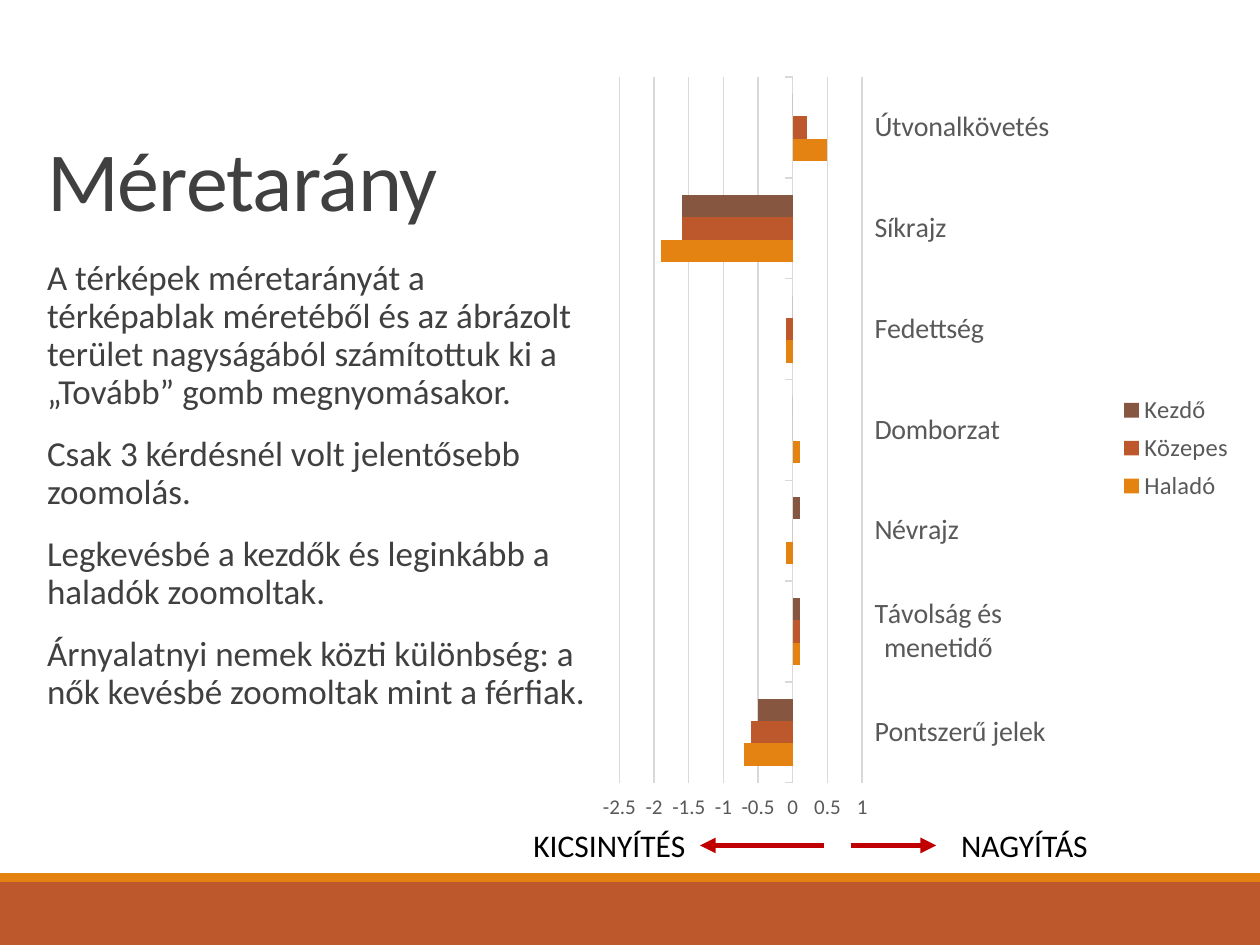
from dataclasses import dataclass

from lxml import etree
from pptx import Presentation
from pptx.chart.data import CategoryChartData
from pptx.dml.color import RGBColor
from pptx.enum.chart import XL_CHART_TYPE, XL_LEGEND_POSITION, XL_TICK_LABEL_POSITION, XL_TICK_MARK
from pptx.enum.shapes import MSO_CONNECTOR, MSO_SHAPE
from pptx.enum.text import MSO_ANCHOR
from pptx.oxml.ns import qn
from pptx.util import Inches, Pt

BAR = XL_CHART_TYPE.BAR_CLUSTERED
LEGEND_RIGHT = XL_LEGEND_POSITION.RIGHT
LABELS_HIGH = XL_TICK_LABEL_POSITION.HIGH
TICK_OUT, TICK_NONE = XL_TICK_MARK.OUTSIDE, XL_TICK_MARK.NONE
STRAIGHT = MSO_CONNECTOR.STRAIGHT
RECT = MSO_SHAPE.RECTANGLE
TOP, BOTTOM = MSO_ANCHOR.TOP, MSO_ANCHOR.BOTTOM
RIGHT_SIDE = 3

# The slide is a grid of square cells
COLS, ROWS, CELL = 100, 75, 0.1


@dataclass(frozen=True)
class Theme:
    font: str = "Calibri"
    text: str = "404040"
    label: str = "000000"
    axis: str = "595959"
    grid: str = "D9D9D9"
    arrow: str = "C00000"
    orange: str = "E48312"
    rust: str = "BD582C"
    brown: str = "865640"
    title_size: int = 48
    body_size: int = 20
    label_size: int = 18
    category_size: int = 16
    legend_size: int = 14
    value_size: int = 12
    chart_size: int = 10


THEME = Theme()

BODY = [
    "A térképek méretarányát a térképablak méretéből és az ábrázolt terület "
    "nagyságából számítottuk ki a „Tovább” gomb megnyomásakor.",
    "Csak 3 kérdésnél volt jelentősebb zoomolás.",
    "Legkevésbé a kezdők és leginkább a haladók zoomoltak.",
    "Árnyalatnyi nemek közti különbség: a nők kevésbé zoomoltak mint a férfiak.",
]
CATEGORIES = ["Pontszerű jelek", "Távolság és menetidő", "Névrajz", "Domborzat",
              "Fedettség", "Síkrajz", "Útvonalkövetés"]
SERIES = [
    ("Haladó", THEME.orange, (-0.7, 0.1, -0.1, 0.1, -0.1, -1.9, 0.5)),
    ("Közepes", THEME.rust, (-0.6, 0.1, 0, 0, -0.1, -1.6, 0.2)),
    ("Kezdő", THEME.brown, (-0.5, 0.1, 0.1, 0, 0, -1.6, 0)),
]


def cells(*counts):
    return [Inches(n * CELL) for n in counts]


def rgb(color):
    return RGBColor.from_string(color)


def style_font(font, size, color):
    font.name = THEME.font
    font.size = Pt(size)
    font.color.rgb = rgb(color)


def add_band(s, top, height, color):
    sp = s.shapes.add_shape(RECT, *cells(0, top, COLS, height))
    sp.shadow.inherit = False
    sp.fill.solid()
    sp.fill.fore_color.rgb = rgb(color)
    sp.line.fill.background()


def add_text(s, box, paragraphs, size, color, wrap=True, anchor=TOP,
             line_spacing=1.0, before=0, after=0, tracking=0):
    sp = s.shapes.add_textbox(*cells(*box))
    tf = sp.text_frame
    tf.word_wrap = wrap
    tf.vertical_anchor = anchor
    for i, text in enumerate(paragraphs):
        p = tf.paragraphs[0] if i == 0 else tf.add_paragraph()
        p.line_spacing = line_spacing
        p.space_before, p.space_after = Pt(before), Pt(after)
        r = p.add_run()
        r.text = text
        style_font(r.font, size, color)
        if tracking:
            r.font._element.set("spc", str(int(tracking * 100)))
    return sp


def add_arrow(s, start, end, row):
    cxn = s.shapes.add_connector(STRAIGHT, *cells(start, row, end, row))
    cxn.line.color.rgb = rgb(THEME.arrow)
    cxn.line.width = Pt(3)
    etree.SubElement(cxn.line._get_or_add_ln(), qn("a:tailEnd"), type="triangle")
    etree.SubElement(cxn._element.spPr, qn("a:effectLst"))
    return cxn


def place_in_chart(parent, index, inner, **percents):
    """Set a manual layout, in percent of the chart's size."""
    for old in parent.findall(qn("c:layout")):
        parent.remove(old)
    layout = etree.Element(qn("c:layout"))
    manual = etree.SubElement(layout, qn("c:manualLayout"))
    if inner:
        etree.SubElement(manual, qn("c:layoutTarget"), val="inner")
    for mode in ("xMode", "yMode"):
        etree.SubElement(manual, qn("c:" + mode), val="edge")
    for name, percent in percents.items():
        etree.SubElement(manual, qn("c:" + name), val=f"{percent / 100:.4f}")
    parent.insert(index, layout)


def style_axes(chart):
    cat, val = chart.category_axis, chart.value_axis
    cat.tick_label_position = LABELS_HIGH
    val.minimum_scale, val.maximum_scale, val.major_unit = -2.5, 1, 0.5
    val.has_major_gridlines = True
    val.format.line.fill.background()
    for line in (cat.format.line, val.major_gridlines.format.line):
        line.color.rgb = rgb(THEME.grid)
        line.width = Pt(0.75)
    for axis, size in ((cat, THEME.category_size), (val, THEME.value_size)):
        axis.major_tick_mark, axis.minor_tick_mark = TICK_OUT, TICK_NONE
        style_font(axis.tick_labels.font, size, THEME.axis)


def add_bar_chart(s, box):
    data = CategoryChartData(number_format="General")
    data.categories = CATEGORIES
    for name, _, values in SERIES:
        data.add_series(name, values)
    chart = s.shapes.add_chart(BAR, *cells(*box), data).chart
    chart.has_title = False
    style_font(chart.font, THEME.chart_size, THEME.label)
    style_axes(chart)

    # Bars
    plot = chart.plots[0]
    plot.gap_width, plot.overlap = 150, 0
    plot.vary_by_categories = False
    for series, (_, color, _) in zip(plot.series, SERIES):
        series.invert_if_negative = False
        series.format.fill.solid()
        series.format.fill.fore_color.rgb = rgb(color)

    # Legend and plot area
    chart.has_legend = True
    legend = chart.legend
    legend.position = LEGEND_RIGHT
    legend.include_in_layout = False
    style_font(legend.font, THEME.legend_size, THEME.axis)
    place_in_chart(legend._element, 1, False, x=77.5, y=42.1, w=20, h=15.7)
    plot_area = chart._chartSpace.chart.plotArea
    place_in_chart(plot_area, 0, True, x=4.45, y=2, w=36.2, h=91.2)


def main():
    prs = Presentation()
    prs.slide_width, prs.slide_height = cells(COLS, ROWS)
    s = prs.slides.add_slide(prs.slide_layouts[6])

    # Bands along the foot
    add_band(s, 70, 5, THEME.rust)
    add_band(s, 69.3, 0.7, THEME.orange)

    # Title and body
    add_text(s, (2.75, 2.75, 37, 15.9), ["Méretarány"], THEME.title_size, THEME.text,
             anchor=BOTTOM, line_spacing=0.85, tracking=-0.5)
    body = add_text(s, (2.75, 20.2, 44, 44), BODY, THEME.body_size, THEME.text,
                    line_spacing=0.9, before=12, after=2)
    body.text_frame.margin_right = 0

    add_bar_chart(s, (46.8, 4.9, 53.2, 61.4))

    # Directions below the value axis
    add_text(s, (75.3, 65.1, 12.1, 4), ["NAGYÍTÁS"], THEME.label_size, THEME.label, wrap=False)
    shrink = add_text(s, (41.35, 65.1, 14.2, 4), ["KICSINYÍTÉS"],
                      THEME.label_size, THEME.label, wrap=False)
    add_arrow(s, 67.5, 74.3, 67.1)
    add_arrow(s, 65.4, 55.55, 67.1).end_connect(shrink, RIGHT_SIDE)

    prs.save("out.pptx")


if __name__ == "__main__":
    main()
